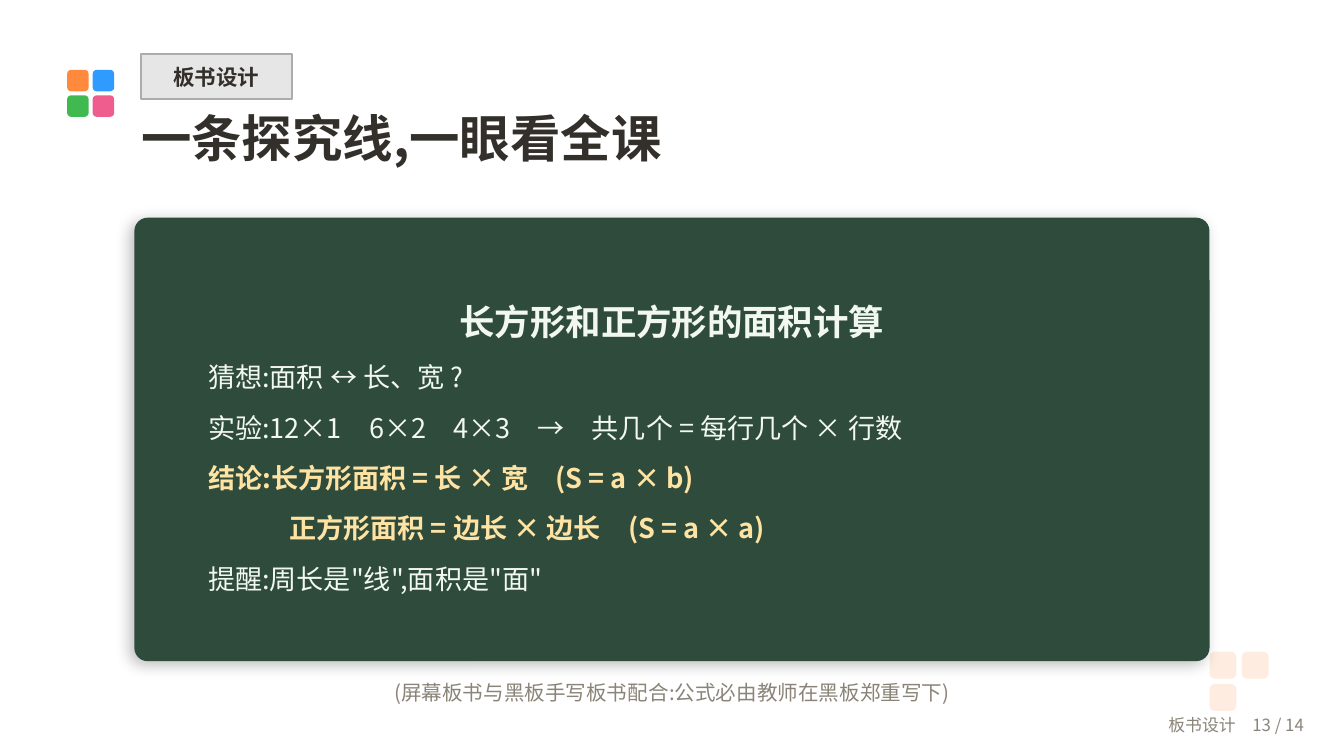
from lxml import etree
from pptx import Presentation
from pptx import util as u
from pptx.dml.color import RGBColor
from pptx.enum import shapes, text
from pptx.oxml.ns import qn

FONT = "Noto Sans CJK SC"
COLORS = {
    "ink": "33302B", "muted": "8A8478", "tag": "E7E6E6", "tag_line": "ADACAA",
    "board": "2E4B3C", "chalk": "F2F7F0", "yellow": "FFE3A3", "peach": "FFECE0",
    "orange": "FF8A3D", "blue": "2F9BFF", "green": "3FB950", "pink": "EF5D8F",
    "paper": "FFFFFF",
}
LEFT, CENTER, RIGHT = text.PP_ALIGN.LEFT, text.PP_ALIGN.CENTER, text.PP_ALIGN.RIGHT
TOP, MIDDLE = text.MSO_ANCHOR.TOP, text.MSO_ANCHOR.MIDDLE
RECT, ROUNDED = shapes.MSO_SHAPE.RECTANGLE, shapes.MSO_SHAPE.ROUNDED_RECTANGLE


def rgb(name):
    return RGBColor.from_string(COLORS[name])


def write(p, words, size, color, bold=False, align=LEFT, spacing=None, indent=0):
    p.alignment = align
    if spacing:
        p.line_spacing = u.Pt(spacing)
    if indent:
        p._p.get_or_add_pPr().set("marL", str(u.Pt(indent)))
    r = p.add_run()
    r.text = words
    r.font.name, r.font.size, r.font.bold = FONT, u.Pt(size), bold
    r.font.color.rgb = rgb(color)
    ea = etree.SubElement(r._r.get_or_add_rPr(), qn("a:ea"))
    ea.set("typeface", FONT)


class Deck:
    def __init__(self, prs):
        self.s = prs.slides.add_slide(prs.slide_layouts[5])
        self.s.background.fill.solid()
        self.s.background.fill.fore_color.rgb = rgb("paper")

    def frame(self, sp, anchor=MIDDLE, inset=True):
        tf = sp.text_frame
        tf.word_wrap, tf.vertical_anchor = True, anchor
        tf.auto_size = text.MSO_AUTO_SIZE.NONE
        if not inset:
            tf.margin_left = tf.margin_top = tf.margin_right = tf.margin_bottom = 0
        return tf

    def title(self, box, words):
        sp = self.s.shapes.title
        sp.left, sp.top, sp.width, sp.height = map(u.Inches, box)
        write(self.frame(sp, TOP, False).paragraphs[0], words, 27, "ink", bold=True)

    def shape(self, kind, box, fill, radius=None, line=None):
        sp = self.s.shapes.add_shape(kind, *map(u.Inches, box))
        sp.shadow.inherit = False
        sp.fill.solid()
        sp.fill.fore_color.rgb = rgb(fill)
        if radius is not None:
            sp.adjustments[0] = radius
        if line:
            sp.line.color.rgb, sp.line.width = rgb(line), u.Pt(1)
        else:
            sp.line.fill.background()
        return sp

    def squares(self, left, top, size, step, radius, colors):
        """Lay small rounded squares in rows of two."""
        for i, color in enumerate(colors):
            row, col = divmod(i, 2)
            box = (left + col * step, top + row * step, size, size)
            self.shape(ROUNDED, box, color, radius)

    def drop_shadow(self, sp):
        effects = sp._element.spPr.find(qn("a:effectLst"))
        shadow = etree.SubElement(effects, qn("a:outerShdw"), blurRad=str(u.Pt(8)),
                                  dist=str(u.Pt(3)), dir=str(135 * 60000),
                                  algn="bl", rotWithShape="0")
        color = etree.SubElement(shadow, qn("a:srgbClr"), val="000000")
        etree.SubElement(color, qn("a:alpha"), val="25000")

    def text(self, box, lines):
        """Add a text box; each line is its words and its format."""
        tf = self.frame(self.s.shapes.add_textbox(*map(u.Inches, box)))
        for i, (words, fmt) in enumerate(lines):
            p = tf.add_paragraph() if i else tf.paragraphs[0]
            write(p, words, **fmt)


def main():
    prs = Presentation()
    prs.slide_width = u.Inches(10)
    prs.slide_height = prs.slide_width * 9 // 16
    deck = Deck(prs)

    deck.squares(9, 4.85, 0.2, 0.24, 0.2, ["peach"] * 3)
    deck.squares(0.5, 0.52, 0.16, 0.19, 0.18, ["orange", "blue", "green", "pink"])

    tag = deck.shape(RECT, (1.05, 0.4, 1.12, 0.34), "tag", line="tag_line")
    write(deck.frame(tag, inset=False).paragraphs[0], "板书设计", 11.5, "ink",
          bold=True, align=CENTER)
    deck.title((1.05, 0.8, 8.4, 0.55), "一条探究线,一眼看全课")

    board = deck.shape(ROUNDED, (1, 1.62, 8, 3.3), "board", 0.03)
    deck.drop_shadow(board)
    heading = dict(size=19, color="chalk", bold=True, align=CENTER, spacing=27)
    note = dict(size=14.5, color="chalk", spacing=27)
    formula = dict(note, color="yellow", bold=True)
    deck.text((1.45, 1.85, 7.1, 2.9), [
        ("长方形和正方形的面积计算", heading),
        ("猜想:面积 ↔ 长、宽 ?", note),
        ("实验:12×1　6×2　4×3　→　共几个 = 每行几个 × 行数", note),
        ("结论:长方形面积 = 长 × 宽　(S = a × b)", formula),
        ("正方形面积 = 边长 × 边长　(S = a × a)", dict(formula, indent=3 * 14.5)),
        ("提醒:周长是\"线\",面积是\"面\"", note),
    ])

    deck.text((1, 5, 8, 0.3), [("(屏幕板书与黑板手写板书配合:公式必由教师在黑板郑重写下)",
                                dict(size=11, color="muted", align=CENTER))])
    deck.text((8, 5.24, 1.8, 0.3), [("板书设计　13 / 14",
                                     dict(size=9, color="muted", align=RIGHT))])
    prs.save("out.pptx")


if __name__ == "__main__":
    main()
